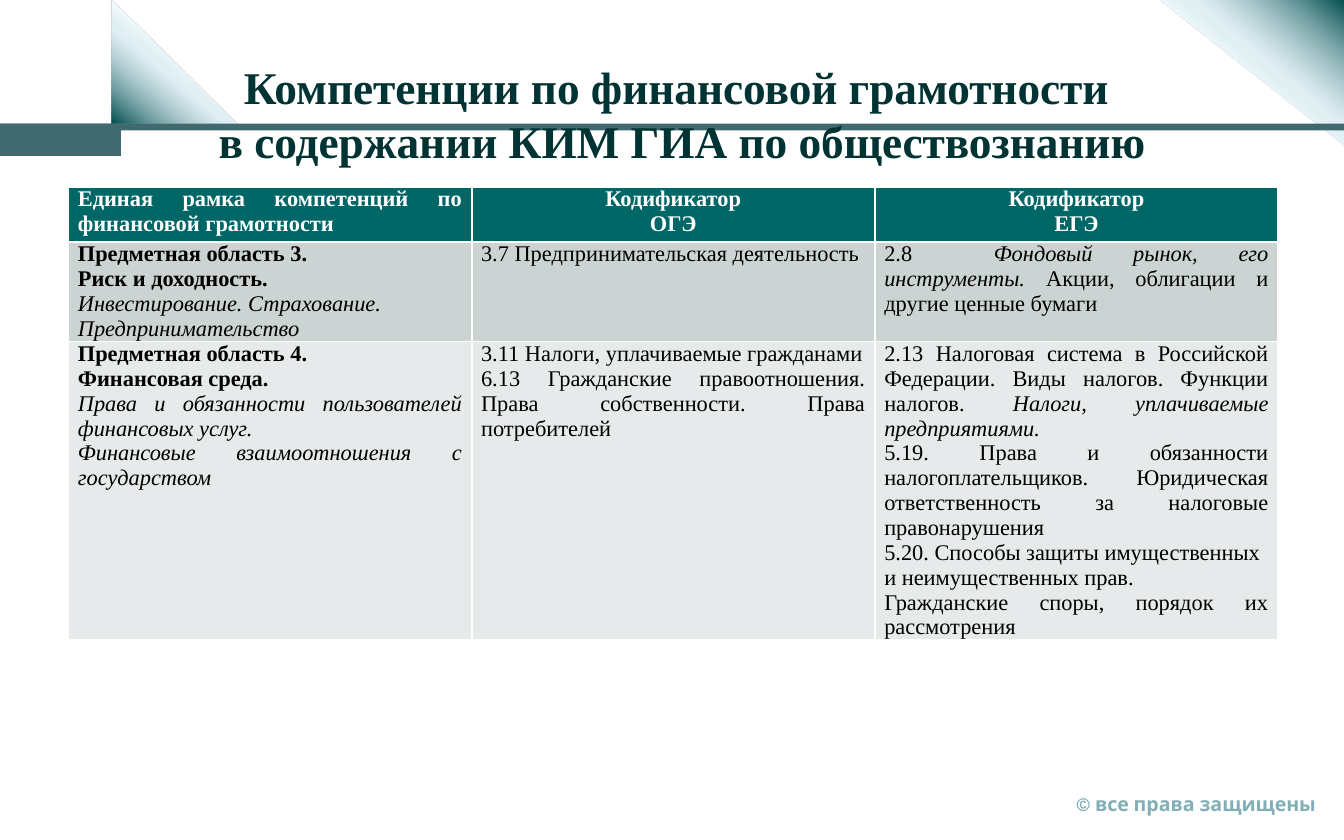
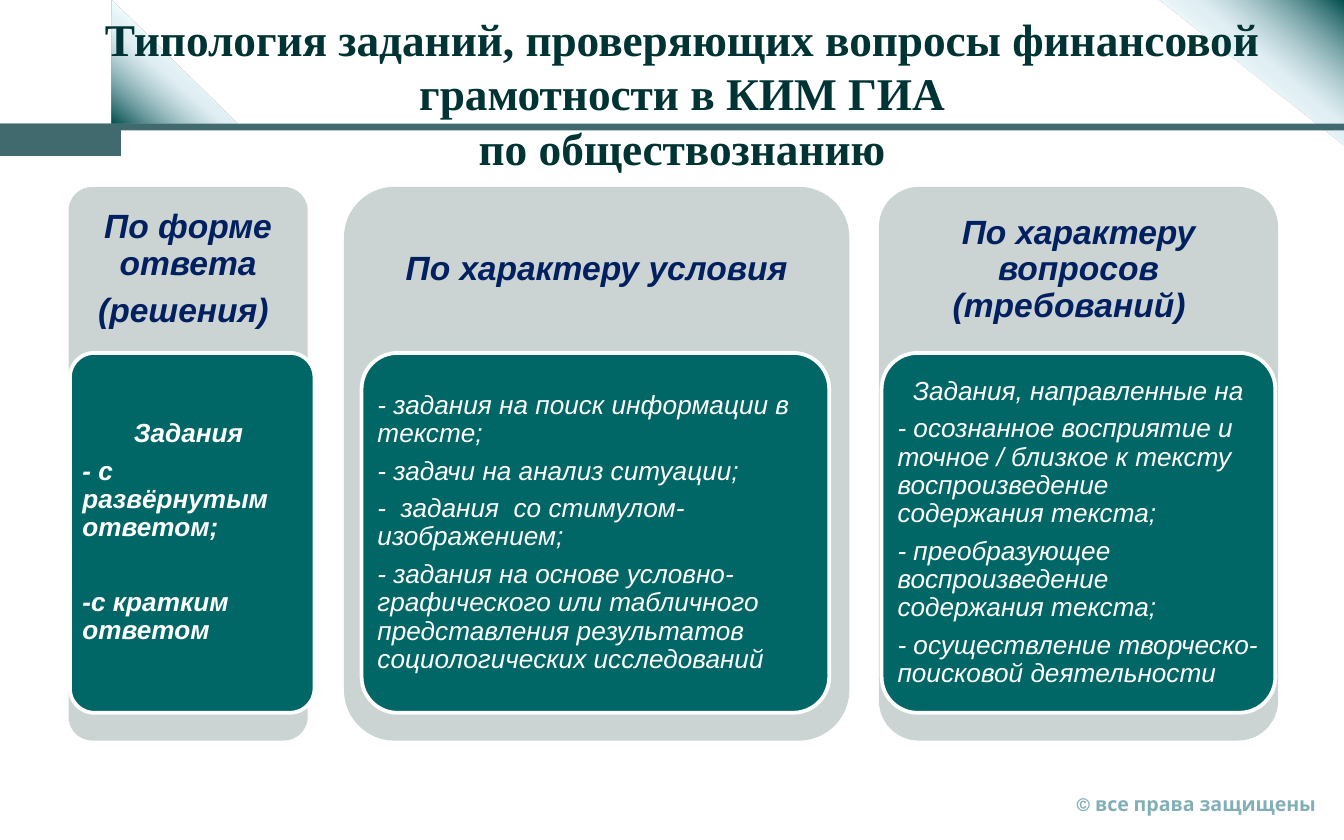
"""Two slides on financial literacy in school exams: a table and a set of cards."""
from pptx import Presentation
from pptx.dml.color import RGBColor
from pptx.enum.shapes import MSO_SHAPE as Form
from pptx.enum.text import MSO_ANCHOR as Anchor, MSO_AUTO_SIZE as Auto, PP_ALIGN as Align
from pptx.oxml import parse_xml
from pptx.oxml.ns import nsdecls, qn
from pptx.util import Emu, Inches, Pt

WHITE = RGBColor(0xFF, 0xFF, 0xFF)
BLACK = RGBColor(0x00, 0x00, 0x00)
DARK = RGBColor(0x00, 0x33, 0x33)
TEAL = RGBColor(0x00, 0x66, 0x66)
SLATE = RGBColor(0x41, 0x6A, 0x6F)
MIST = RGBColor(0x81, 0xAF, 0xB5)
GREY = RGBColor(0xCC, 0xD3, 0xD3)
PALE = RGBColor(0xE7, 0xEA, 0xEA)
NAVY = RGBColor(0x00, 0x20, 0x60)
SERIF, SANS = "Times New Roman", "Arial"
LEFT, MID, JUST = Align.LEFT, Align.CENTER, Align.JUSTIFY

deck = Presentation()
deck.slide_width, deck.slide_height = Inches(10), Inches(6.25)
W, H = deck.slide_width, deck.slide_height


def area(left, top, width, height):
    """Turn percentages of the slide into lengths."""
    return [Emu(round(side * part / 100)) for side, part in zip((W, H, W, H), (left, top, width, height))]


def write(frame, lines, face, size, color, bold=False, slant=False, pad=(0.1, 0.05)):
    """Fill a frame with (text, align) lines; * opens a bold line, _ wraps italics."""
    frame.word_wrap = True
    frame.margin_left = frame.margin_right = Inches(pad[0])
    frame.margin_top = frame.margin_bottom = Inches(pad[1])
    for i, (text, align) in enumerate(lines):
        para = frame.add_paragraph() if i else frame.paragraphs[0]
        para.alignment = align
        font = para.font
        font.name, font.size, font.color.rgb = face, Pt(size), color
        font.bold, font.italic = bold or text.startswith("*"), slant
        for j, part in enumerate(text.lstrip("*").split("_")):
            if part:
                run = para.add_run()
                run.text = part
                if j % 2:
                    run.font.italic = True


TITLES = [
    ("Компетенции по финансовой грамотности \nв содержании КИМ ГИА по обществознанию", 18.88),
    ("Типология заданий, проверяющих вопросы финансовой грамотности в КИМ ГИА\nпо обществознанию", 13.92),
]
WEDGES = [((87.7, -2.4, 10.8, 22.08), 270), ((8.4, -0.16, 9.2, 15.04), 90)]
BANDS = [(0, 14.72, 100, 0.8), (0, 14.72, 9, 3.84)]
STOPS = [(46, "F7FFFF", 100), (58, "C4E0EA", 50), (100, "004C4D", 100), (100, "003333", 100)]
stops = "".join(
    f'<a:gs pos="{pos}000"><a:srgbClr val="{tint}"><a:alpha val="{alpha}000"/></a:srgbClr></a:gs>'
    for pos, tint, alpha in STOPS)

for text, height in TITLES:
    slide = deck.slides.add_slide(deck.slide_layouts[5])
    shapes = slide.shapes
    for place, turn in WEDGES:
        wedge = shapes.add_shape(Form.RIGHT_TRIANGLE, *area(*place))
        wedge.shadow.inherit = False
        wedge.line.fill.background()
        wedge.rotation = turn
        props = wedge._element.spPr
        props.xfrm.set("flipH", "1")
        wedge.fill.gradient()
        wedge.fill.gradient_angle = 220
        grad = props.find(qn("a:gradFill"))
        grad.replace(grad.find(qn("a:gsLst")), parse_xml(f'<a:gsLst {nsdecls("a")}>{stops}</a:gsLst>'))
    for place in BANDS:
        band = shapes.add_shape(Form.RECTANGLE, *area(*place))
        band.shadow.inherit = False
        band.line.fill.background()
        band.fill.solid()
        band.fill.fore_color.rgb = SLATE
    foot = shapes.add_textbox(*area(79.1, 93.44, 20.2, 4.48)).text_frame
    write(foot, [("© все права защищены", LEFT)], "Karla", 10.5, MIST, bold=True)
    foot.word_wrap = False
    foot.auto_size = Auto.SHAPE_TO_FIT_TEXT

    title = shapes.title
    title.left, title.top, title.width, title.height = area(5, 0.8, 91.5, height)
    shapes._spTree.append(title._element)
    frame = title.text_frame
    write(frame, [("", MID)], SERIF, 24.3, DARK, bold=True)
    frame.paragraphs[0].text = text
    frame.auto_size = Auto.NONE
    frame.vertical_anchor = Anchor.MIDDLE
    frame.margin_top = Inches(0.46)

first, second = deck.slides

ROWS = [
    (6.56, TEAL, WHITE, [
        [("Единая рамка компетенций по финансовой грамотности", JUST)],
        [("Кодификатор", MID), ("ОГЭ", MID)],
        [("Кодификатор", MID), ("ЕГЭ", MID)],
    ]),
    (11.84, GREY, BLACK, [
        [("*Предметная область 3. ", JUST),
         ("*Риск и доходность.", JUST),
         ("_Инвестирование. Страхование._", JUST),
         ("_Предпринимательство_", JUST)],
        [("3.7 Предпринимательская деятельность", JUST)],
        [("2.8  _Фондовый рынок, его инструменты._ Акции, облигации и другие ценные бумаги", JUST)],
    ]),
    (35.36, PALE, BLACK, [
        [("*Предметная область 4. ", JUST),
         ("*Финансовая среда.", JUST),
         ("_Права и обязанности пользователей финансовых услуг._", JUST),
         ("_Финансовые взаимоотношения с государством_", JUST)],
        [("3.11 Налоги, уплачиваемые гражданами", JUST),
         ("6.13 Гражданские правоотношения. Права собственности. Права потребителей", JUST)],
        [("2.13 Налоговая система в Российской Федерации. Виды налогов. Функции налогов. "
          "_Налоги, уплачиваемые предприятиями._", JUST),
         ("5.19. Права и обязанности налогоплательщиков. Юридическая ответственность "
          "за налоговые правонарушения", JUST),
         ("5.20. Способы защиты имущественных и неимущественных прав.", LEFT),
         ("Гражданские споры, порядок их рассмотрения", JUST)],
    ]),
]
total = sum(row[0] for row in ROWS)
table = first.shapes.add_table(len(ROWS), 3, *area(5.1, 22.24, 90, total)).table
for line, (height, back, ink, cells) in zip(table.rows, ROWS):
    line.height = area(0, 0, 0, height)[3]
    for cell, lines in zip(line.cells, cells):
        cell.fill.solid()
        cell.fill.fore_color.rgb = back
        write(cell.text_frame, lines, SERIF, 12, ink, bold=back == TEAL)
        cell.margin_left = cell.margin_right = Inches(0.07)
        cell.margin_top = cell.margin_bottom = 0

CARDS = [
    (5.1, 17.8, 5.2, 18.2, True,
     [("По форме ответа", MID), ("(решения) ", MID)],
     [("Задания ", MID),
      ("- с развёрнутым ответом;", LEFT),
      ("-с кратким ответом", LEFT)]),
    (25.6, 37.6, 26.9, 34.8, False,
     [("По характеру условия", MID)],
     [("- задания на поиск информации в тексте;", LEFT),
      ("- задачи на анализ ситуации;", LEFT),
      ("-  задания  со стимулом-изображением;", LEFT),
      ("- задания на основе условно-графического или табличного представления "
       "результатов социологических исследований", LEFT)]),
    (65.4, 29.7, 65.6, 29.3, False,
     [("По характеру вопросов (требований)  ", MID)],
     [("Задания, направленные на", MID),
      ("- осознанное восприятие и точное / близкое к тексту воспроизведение содержания текста;", LEFT),
      ("- преобразующее воспроизведение содержания текста;", LEFT),
      ("- осуществление творческо-поисковой деятельности", LEFT)]),
]
TOP, TALL = 22.24, 65.92
HEAD = TALL * 0.3
shapes = second.shapes
for left, wide, start, span, bold, heads, tasks in CARDS:
    card = shapes.add_shape(Form.ROUNDED_RECTANGLE, *area(left, TOP, wide, TALL))
    head = shapes.add_textbox(*area(left, TOP, wide, HEAD))
    panel = shapes.add_shape(Form.ROUNDED_RECTANGLE, *area(start, TOP + HEAD, span, TALL * 0.65))
    for shape, back in ((card, GREY), (panel, TEAL)):
        shape.shadow.inherit = False
        shape.adjustments[0] = 0.1
        shape.fill.solid()
        shape.fill.fore_color.rgb = back
    card.line.fill.background()
    panel.line.color.rgb = WHITE
    panel.line.width = Pt(2)
    write(head.text_frame, heads, SANS, 18, NAVY, True, True, (0.07, 0.07))
    write(panel.text_frame, tasks, SANS, 14, WHITE, bold, True, (0.04, 0.03))
    for frame, gap in ((head.text_frame, 6), (panel.text_frame, 5)):
        frame.vertical_anchor = Anchor.MIDDLE
        for para in frame.paragraphs:
            para.line_spacing = 0.9
            para.space_after = Pt(gap)
    if bold:
        panel.text_frame.paragraphs[-1].space_before = Pt(20)

deck.save("out.pptx")
